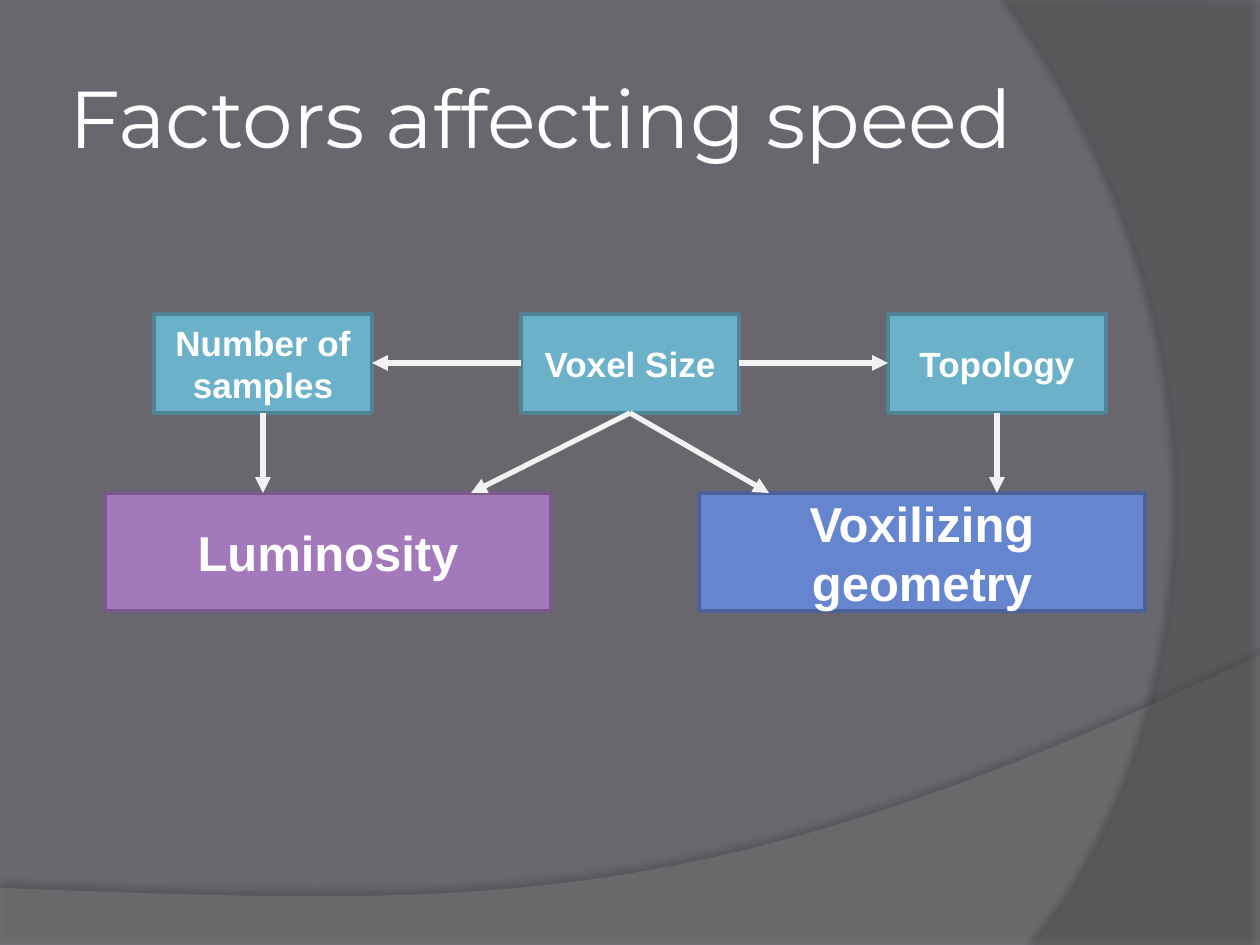
"""Build the slide that maps the factors affecting speed."""
import dataclasses

import lxml.etree
import pptx
import pptx.dml.color
import pptx.enum.dml
import pptx.enum.shapes
import pptx.enum.text
import pptx.oxml.ns
import pptx.slide
import pptx.util

RGBColor = pptx.dml.color.RGBColor
Point = tuple[int, int]

SCALE = 914400 / 126
BACKGROUND = RGBColor(0x69, 0x67, 0x6D)
WAVE_GREY = RGBColor(0x7F, 0x7F, 0x7F)
ARC_GREY = RGBColor(0x5E, 0x5E, 0x5E)
WHITE = RGBColor(0xFF, 0xFF, 0xFF)
ARROW_WHITE = RGBColor(0xF2, 0xF2, 0xF2)
TEAL = RGBColor(0x6B, 0xB1, 0xC9)
TEAL_EDGE = RGBColor(0x4F, 0x83, 0x95)
PURPLE = RGBColor(0xA3, 0x79, 0xBB)
PURPLE_EDGE = RGBColor(0x79, 0x5A, 0x8A)
BLUE = RGBColor(0x65, 0x85, 0xCF)
BLUE_EDGE = RGBColor(0x4B, 0x62, 0x99)


@dataclasses.dataclass(frozen=True)
class Backdrop:
    corners: list[Point]
    curve: list[Point]
    color: RGBColor
    opacity: int
    shadow_opacity: int
    shadow_distance: float
    shadow_angle: int


@dataclasses.dataclass(frozen=True)
class Node:
    text: str
    left: int
    top: int
    width: int
    height: int
    fill: RGBColor
    edge: RGBColor
    size: int

    @property
    def right(self) -> int:
        return self.left + self.width

    @property
    def bottom(self) -> int:
        return self.top + self.height

    @property
    def center(self) -> int:
        return self.left + self.width // 2

    @property
    def middle(self) -> int:
        return self.top + self.height // 2


BACKDROPS = [
    Backdrop([(0, 888), (0, 946), (1260, 946), (1260, 655)],
             [(704, 919), (493, 906), (0, 888)], WAVE_GREY, 45, 35, 3.5, 270),
    Backdrop([(1260, 3), (1260, 945), (1034, 945)],
             [(1178, 780), (1283, 378), (1008, 0)], ARC_GREY, 40, 45, 4, 180),
]
SAMPLES, VOXEL, TOPOLOGY = (
    Node(text, 154 + 367 * column, 314, 218, 99, TEAL, TEAL_EDGE, 20)
    for column, text in enumerate(["Number of samples", "Voxel Size", "Topology"])
)
LUMINOSITY = Node("Luminosity", 105, 493, 446, 118, PURPLE, PURPLE_EDGE, 28)
GEOMETRY = Node("Voxilizing geometry", 699, 493, 446, 118, BLUE, BLUE_EDGE, 28)
ARROWS = [
    ((SAMPLES.center, SAMPLES.bottom), (SAMPLES.center, LUMINOSITY.top)),
    ((VOXEL.center, VOXEL.bottom), (471, LUMINOSITY.top)),
    ((VOXEL.center, VOXEL.bottom), (769, GEOMETRY.top)),
    ((TOPOLOGY.center, TOPOLOGY.bottom), (TOPOLOGY.center, GEOMETRY.top)),
    ((VOXEL.left, VOXEL.middle), (SAMPLES.right, SAMPLES.middle)),
    ((VOXEL.right, VOXEL.middle), (TOPOLOGY.left, TOPOLOGY.middle)),
]


def px(length: float) -> pptx.util.Emu:
    """Turn pixels into EMU."""
    return pptx.util.Emu(round(length * SCALE))


def add_child(parent, tag: str, **attributes: object):
    """Append a DrawingML element."""
    values = {name: str(value) for name, value in attributes.items()}
    return lxml.etree.SubElement(parent, pptx.oxml.ns.qn(tag), values)


def bezier(controls: list[Point], steps: int = 60) -> list[tuple[float, float]]:
    """Sample a cubic curve after its start point."""
    points = []
    for step in range(1, steps + 1):
        t = step / steps
        weights = ((1 - t) ** 3, 3 * t * (1 - t) ** 2, 3 * t * t * (1 - t), t ** 3)
        points.append(tuple(sum(weight * point[axis] for weight, point in zip(weights, controls))
                            for axis in (0, 1)))
    return points


def draw_backdrop(page: pptx.slide.Slide, backdrop: Backdrop) -> None:
    """Draw a translucent curved area behind the title."""
    start, *corners = backdrop.corners
    curve = bezier([backdrop.corners[-1], *backdrop.curve])
    builder = page.shapes.build_freeform(px(start[0]), px(start[1]))
    builder.add_line_segments([(px(x), px(y)) for x, y in [*corners, *curve]], close=True)
    box = builder.convert_to_shape()
    box.fill.solid()
    box.fill.fore_color.rgb = backdrop.color
    box.line.fill.background()
    box.shadow.inherit = False
    properties = box.element.spPr
    fill_color = properties.find(pptx.oxml.ns.qn("a:solidFill"))[0]
    add_child(fill_color, "a:alpha", val=backdrop.opacity * 1000)
    effects = properties.find(pptx.oxml.ns.qn("a:effectLst"))
    shadow = add_child(effects, "a:outerShdw", blurRad=pptx.util.Pt(4),
                       dist=pptx.util.Pt(backdrop.shadow_distance),
                       dir=backdrop.shadow_angle * 60000, algn="ctr", rotWithShape=0)
    shadow_color = add_child(shadow, "a:srgbClr", val="000000")
    add_child(shadow_color, "a:alpha", val=backdrop.shadow_opacity * 1000)
    page.shapes.title.element.addprevious(box.element)


def write_title(page: pptx.slide.Slide, text: str) -> None:
    """Place and format the title."""
    title = page.shapes.title
    title.left, title.top, title.width, title.height = px(63), px(38), px(1153), px(157)
    frame = title.text_frame
    frame.text = text
    frame.word_wrap = True
    frame.auto_size = pptx.enum.text.MSO_AUTO_SIZE.NONE
    frame.vertical_anchor = pptx.enum.text.MSO_ANCHOR.MIDDLE
    frame.margin_left = frame.margin_right = pptx.util.Inches(0.05)
    frame.margin_top = frame.margin_bottom = pptx.util.Inches(0.05)
    para = frame.paragraphs[0]
    para.alignment = pptx.enum.text.PP_ALIGN.LEFT
    para.font.name = "Montserrat"
    para.font.size = pptx.util.Pt(46)
    para.font.color.rgb = WHITE


def draw_node(page: pptx.slide.Slide, node: Node) -> None:
    """Draw a labelled rectangle."""
    box = page.shapes.add_shape(pptx.enum.shapes.MSO_SHAPE.RECTANGLE, px(node.left),
                                px(node.top), px(node.width), px(node.height))
    box.shadow.inherit = False
    box.fill.solid()
    box.fill.fore_color.rgb = node.fill
    box.line.color.rgb = node.edge
    box.line.width = pptx.util.Pt(2)
    box.text_frame.text = node.text
    box.text_frame.word_wrap = True
    box.text_frame.vertical_anchor = pptx.enum.text.MSO_ANCHOR.MIDDLE
    para = box.text_frame.paragraphs[0]
    para.alignment = pptx.enum.text.PP_ALIGN.CENTER
    para.font.name = "Arial"
    para.font.size = pptx.util.Pt(node.size)
    para.font.bold = True
    para.font.color.rgb = WHITE


def draw_arrow(page: pptx.slide.Slide, start: Point, end: Point) -> None:
    """Draw a straight arrow."""
    arrow = page.shapes.add_connector(pptx.enum.shapes.MSO_CONNECTOR.STRAIGHT,
                                      *map(px, start), *map(px, end))
    arrow.line.color.rgb = ARROW_WHITE
    arrow.line.width = pptx.util.Pt(3)
    properties = arrow.element.spPr
    add_child(properties.find(pptx.oxml.ns.qn("a:ln")), "a:tailEnd", type="triangle")
    add_child(properties, "a:effectLst")


def main() -> None:
    """Build and save the deck."""
    deck = pptx.Presentation()
    deck.slide_width, deck.slide_height = px(1260), px(945)
    page = deck.slides.add_slide(deck.slide_layouts.get_by_name("Title Only"))
    page.background.fill.solid()
    page.background.fill.fore_color.rgb = BACKGROUND
    write_title(page, "Factors affecting speed")
    for backdrop in BACKDROPS:
        draw_backdrop(page, backdrop)
    for node in (LUMINOSITY, SAMPLES, VOXEL, GEOMETRY, TOPOLOGY):
        draw_node(page, node)
    for start, end in ARROWS:
        draw_arrow(page, start, end)
    deck.save("out.pptx")


if __name__ == "__main__":
    main()
